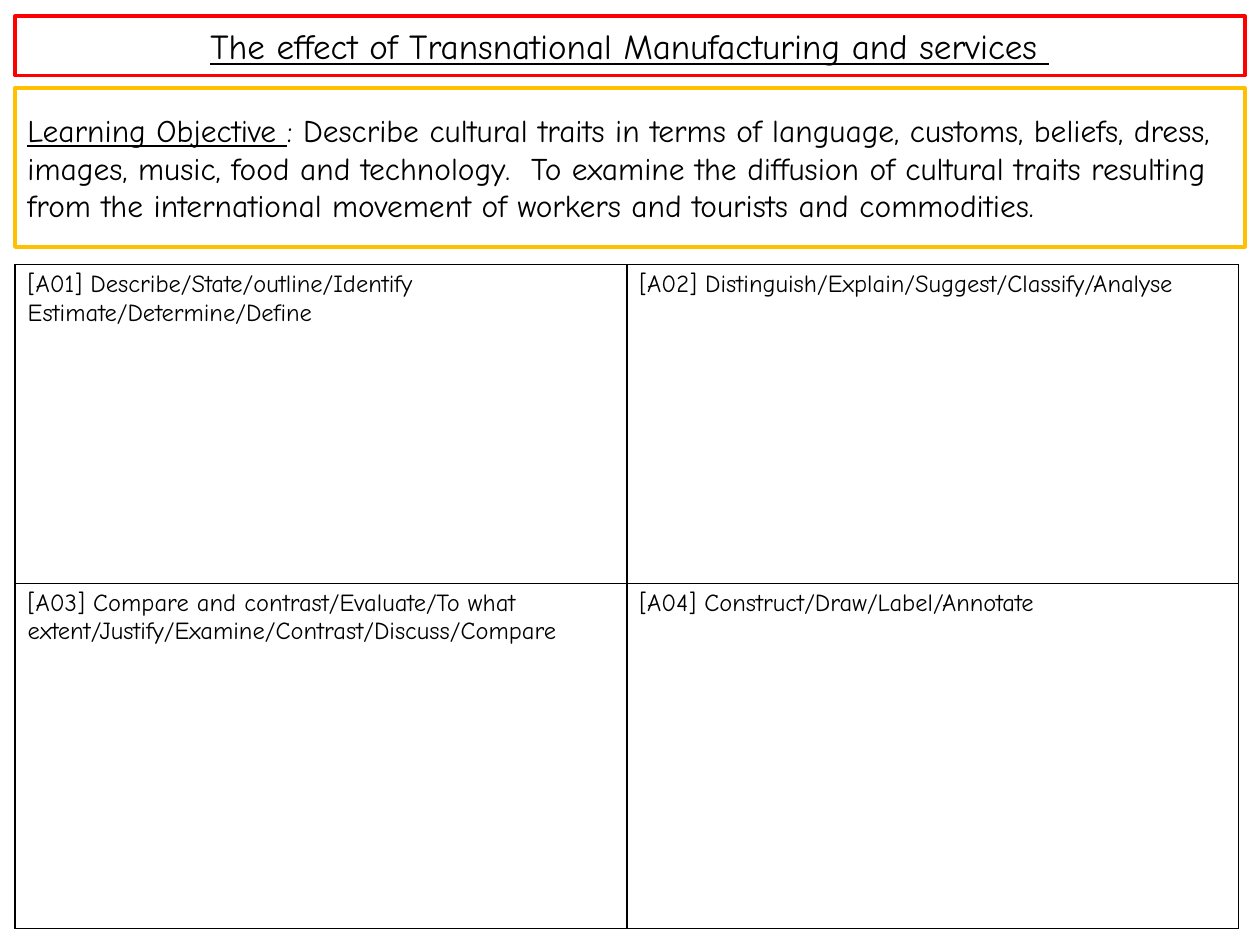
from lxml import etree
from pptx import Presentation
from pptx.dml.color import RGBColor
from pptx.enum.shapes import MSO_SHAPE
from pptx.enum.text import MSO_ANCHOR, PP_ALIGN
from pptx.oxml.ns import qn
from pptx.util import Inches, Pt

RECT = MSO_SHAPE.RECTANGLE
MIDDLE = MSO_ANCHOR.MIDDLE
LEFT, CENTER = PP_ALIGN.LEFT, PP_ALIGN.CENTER

FONT, INK = "Comic Neue", "000000"
WIDE, HIGH = 10, 7.5
EDGE = 0.12

BOXES = [
    {"top": 0.13, "high": 0.47, "line": "FF0000", "size": 20, "align": CENTER,
     "runs": [("The effect of Transnational Manufacturing and services ", True)]},
    {"top": 0.7, "high": 1.26, "line": "FFC000", "size": 18, "align": LEFT,
     "runs": [("Learning Objective ", True),
              (": Describe cultural traits in terms of language, customs, beliefs, "
               "dress, images, music, food and technology.  To examine the diffusion "
               "of cultural traits resulting from the international movement of "
               "workers and tourists and commodities.", False)]},
]

TASKS = [
    ["[A01] Describe/State/outline/Identify  Estimate/Determine/Define",
     "[A02] Distinguish/Explain/Suggest/Classify/Analyse"],
    ["[A03] Compare and contrast/Evaluate/To what "
     "extent/Justify/Examine/Contrast/Discuss/Compare",
     "[A04] Construct/Draw/Label/Annotate"],
]
GRID = {"top": 2.1, "col": 4.855, "rows": [2.53, 2.74]}


def color(code):
    return RGBColor.from_string(code)


def write(para, text, size, under=False):
    run = para.add_run()
    run.text = text
    style = {"name": FONT, "size": Pt(size), "bold": False, "underline": under}
    for key, value in style.items():
        setattr(run.font, key, value)
    run.font.color.rgb = color(INK)


def add_box(slide, box):
    shape = slide.shapes.add_shape(
        RECT, Inches(EDGE), Inches(box["top"]),
        Inches(WIDE - 2 * EDGE), Inches(box["high"]))
    shape.shadow.inherit = False
    shape.fill.background()
    shape.line.color.rgb = color(box["line"])
    shape.line.width = Pt(2.25)
    frame = shape.text_frame
    frame.word_wrap = True
    frame.vertical_anchor = MIDDLE
    para = frame.paragraphs[0]
    para.alignment = box["align"]
    for text, under in box["runs"]:
        write(para, text, box["size"], under)


def add_border(cell):
    props = cell._tc.get_or_add_tcPr()
    for spot, side in enumerate(("lnL", "lnR", "lnT", "lnB")):
        line = etree.Element(qn("a:" + side), w=str(Pt(1)))
        fill = etree.SubElement(line, qn("a:solidFill"))
        etree.SubElement(fill, qn("a:srgbClr"), val=INK)
        props.insert(spot, line)


def add_grid(slide):
    wide = GRID["col"] * len(TASKS[0])
    table = slide.shapes.add_table(
        len(TASKS), len(TASKS[0]), Inches(EDGE), Inches(GRID["top"]),
        Inches(wide), Inches(sum(GRID["rows"]))).table
    table.first_row = table.horz_banding = False
    for col in table.columns:
        col.width = Inches(GRID["col"])
    for r, texts in enumerate(TASKS):
        table.rows[r].height = Inches(GRID["rows"][r])
        for c, text in enumerate(texts):
            cell = table.cell(r, c)
            cell.fill.background()
            add_border(cell)
            write(cell.text_frame.paragraphs[0], text, 14)


def main():
    deck = Presentation()
    deck.slide_width, deck.slide_height = Inches(WIDE), Inches(HIGH)
    slide = deck.slides.add_slide(deck.slide_layouts[6])
    for box in BOXES:
        add_box(slide, box)
    add_grid(slide)
    deck.save("out.pptx")


if __name__ == "__main__":
    main()
